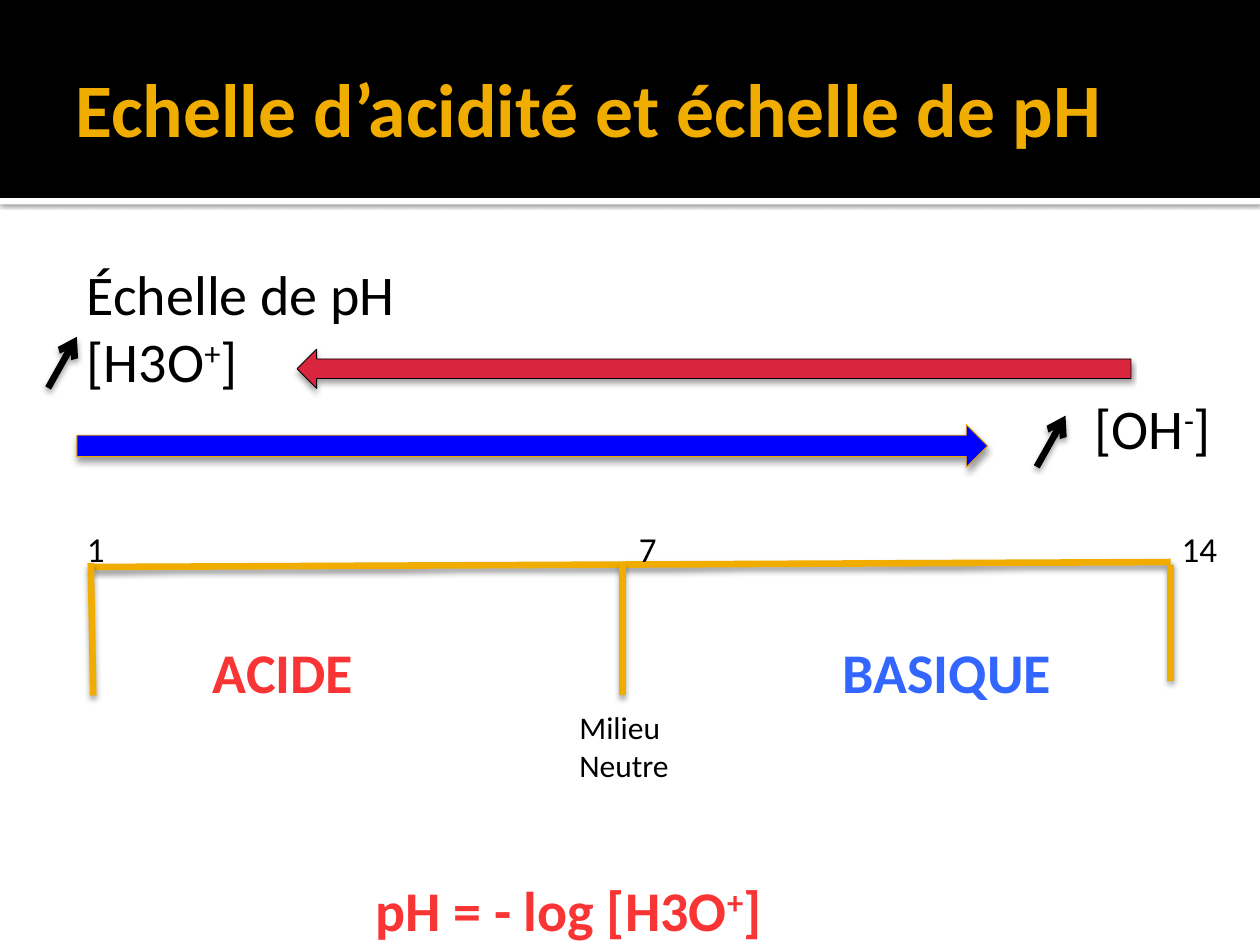
from dataclasses import dataclass
from typing import NamedTuple

from lxml import etree
from pptx import Presentation
from pptx import util as u
from pptx.dml.color import RGBColor
from pptx.enum import shapes, text
from pptx.oxml import ns


@dataclass(frozen=True)
class Theme:
    font: str = "Calibri"
    black: str = "000000"
    white: str = "FFFFFF"
    gold: str = "F0AD00"
    gold_edge: str = "EBA900"
    crimson: str = "D9253E"
    blue: str = "0000FF"
    acid: str = "F83534"
    base: str = "3366FF"
    title_size: float = 43.2
    body_size: float = 32
    number_size: float = 20
    note_size: float = 18
    stroke: float = 3.78
    edge: float = 0.5


THEME = Theme()


class Shadow(NamedTuple):
    blur: float
    distance: float
    opacity: int


LINE_SHADOW = Shadow(3.5, 2, 38)
ARROW_SHADOW = Shadow(3.1, 2, 38)
STRIP_SHADOW = Shadow(2.5, 0.8, 60)


class Run(NamedTuple):
    text: str
    raised: bool = False


@dataclass(frozen=True)
class Label:
    """Text lines, each a list of runs; box lengths in centimetres."""
    left: float
    top: float
    width: float
    height: float
    lines: list[list[Run]]
    size: float = THEME.body_size
    color: str = THEME.black
    bold: bool = False
    anchor: text.MSO_ANCHOR = text.MSO_ANCHOR.TOP


@dataclass(frozen=True)
class Block:
    kind: shapes.MSO_SHAPE
    left: float
    top: float
    width: float
    height: float
    fill: str
    edge: str | None = None
    shadow: Shadow | None = None


@dataclass(frozen=True)
class Stroke:
    start: tuple[float, float]
    end: tuple[float, float]
    color: str = THEME.gold
    arrow: bool = False


def set_shadow(shape, shadow: Shadow | None) -> None:
    """Append the effect list; call once fill and line are set."""
    effects = etree.SubElement(shape._element.spPr, ns.qn("a:effectLst"))
    if shadow is None:
        return
    outer = etree.SubElement(
        effects, ns.qn("a:outerShdw"), blurRad=str(u.Pt(shadow.blur)),
        dist=str(u.Pt(shadow.distance)), dir="5400000", rotWithShape="0")
    tint = etree.SubElement(outer, ns.qn("a:srgbClr"), val=THEME.black)
    etree.SubElement(tint, ns.qn("a:alpha"), val=str(shadow.opacity * 1000))


def draw_block(slide, block: Block) -> None:
    shape = slide.shapes.add_shape(
        block.kind, u.Cm(block.left), u.Cm(block.top),
        u.Cm(block.width), u.Cm(block.height))
    shape.fill.solid()
    shape.fill.fore_color.rgb = RGBColor.from_string(block.fill)
    if block.edge:
        shape.line.color.rgb = RGBColor.from_string(block.edge)
        shape.line.width = u.Pt(THEME.edge)
    else:
        shape.line.fill.background()
    set_shadow(shape, block.shadow)


def draw_stroke(slide, stroke: Stroke) -> None:
    line = slide.shapes.add_connector(
        shapes.MSO_CONNECTOR.STRAIGHT,
        *(u.Cm(v) for v in (*stroke.start, *stroke.end)))
    line.line.color.rgb = RGBColor.from_string(stroke.color)
    line.line.width = u.Pt(THEME.stroke)
    if stroke.arrow:
        etree.SubElement(line.line._get_or_add_ln(), ns.qn("a:tailEnd"), type="arrow")
    set_shadow(line, LINE_SHADOW)


def draw_label(slide, label: Label) -> None:
    frame = slide.shapes.add_textbox(
        u.Cm(label.left), u.Cm(label.top),
        u.Cm(label.width), u.Cm(label.height)).text_frame
    frame.margin_left = frame.margin_right = 0
    frame.margin_top = frame.margin_bottom = 0
    frame.word_wrap = True
    frame.vertical_anchor = label.anchor
    for i, line in enumerate(label.lines):
        paragraph = frame.add_paragraph() if i else frame.paragraphs[0]
        for part in line:
            run = paragraph.add_run()
            run.text = part.text
            run.font.name = THEME.font
            run.font.size = u.Pt(label.size)
            run.font.bold = label.bold
            run.font.color.rgb = RGBColor.from_string(label.color)
            if part.raised:
                run.font._element.set("baseline", "30000")


def main() -> None:
    deck = Presentation()
    deck.slide_width, deck.slide_height = u.Cm(25.4), u.Cm(19.05)
    slide = deck.slides.add_slide(deck.slide_layouts[6])

    kind = shapes.MSO_SHAPE
    margin, row_top, row_step = 1.75, 5.23, 1.35
    axis_left, axis_middle, axis_right = 1.88, 12.55, 23.6

    # Title band, with a white strip below it
    draw_block(slide, Block(kind.RECTANGLE, 0, 3.99, 25.4, 0.13,
                            THEME.white, shadow=STRIP_SHADOW))
    draw_block(slide, Block(kind.RECTANGLE, 0, 0, 25.4, 3.99, THEME.black))
    draw_label(slide, Label(
        1.52, 0.43, 23.5, 3.48, [[Run("Echelle d’acidité et échelle de pH")]],
        THEME.title_size, THEME.gold, True, text.MSO_ANCHOR.MIDDLE))

    # pH axis, drawn under its numbers
    draw_stroke(slide, Stroke((axis_left, 11.43), (axis_right, 11.33)))

    # Ion concentrations
    hydronium = [Run("[H3O"), Run("+", True), Run("]")]
    hydroxide = [Run("[OH"), Run("-", True), Run("]")]
    concentrations = [(margin, [Run("Échelle de pH")]),
                      (margin, hydronium), (22.07, hydroxide)]
    for row, (left, runs) in enumerate(concentrations):
        draw_label(slide, Label(left, row_top + row * row_step,
                                8 if row == 0 else 3.3, row_step, [runs]))

    # Axis numbers
    for left, number in ((margin, "1"), (12.88, "7"), (23.82, "14")):
        draw_label(slide, Label(left, 10.64, 1.2, 0.86, [[Run(number)]],
                                THEME.number_size))

    # Acid and basic zones, neutral middle
    for left, zone, color in ((4.29, "ACIDE", THEME.acid),
                              (16.99, "BASIQUE", THEME.base)):
        draw_label(slide, Label(left, 12.85, 5, row_step, [[Run(zone)]],
                                color=color, bold=True))
    draw_label(slide, Label(11.68, 14.27, 2.2, 1.55,
                            [[Run("Milieu")], [Run("Neutre")]], THEME.note_size))

    # Axis ticks
    for start, end in (((1.83, 11.35), (axis_left, 14.02)),
                       ((axis_middle, 11.35), (axis_middle, 14.02)),
                       ((axis_right, 11.38), (axis_right, 13.72))):
        draw_stroke(slide, Stroke(start, end))

    # Direction arrows, each with a small rising arrow
    draw_block(slide, Block(kind.LEFT_ARROW, 5.99, 7.04, 16.81, 0.79,
                            THEME.crimson, THEME.black, ARROW_SHADOW))
    draw_block(slide, Block(kind.RIGHT_ARROW, 1.55, 8.56, 18.36, 0.86,
                            THEME.blue, THEME.gold_edge, ARROW_SHADOW))
    for left, bottom in ((0.97, 7.82), (20.9, 9.41)):
        draw_stroke(slide, Stroke((left, bottom), (left + 0.58, bottom - 1.03),
                                  THEME.black, arrow=True))

    # Definition of pH
    definition = [Run("pH = - log [H3O"), *hydronium[1:]]
    draw_label(slide, Label(7.57, 17.65, 10.2, row_step, [definition],
                            color=THEME.acid, bold=True))

    deck.save("out.pptx")


if __name__ == "__main__":
    main()
